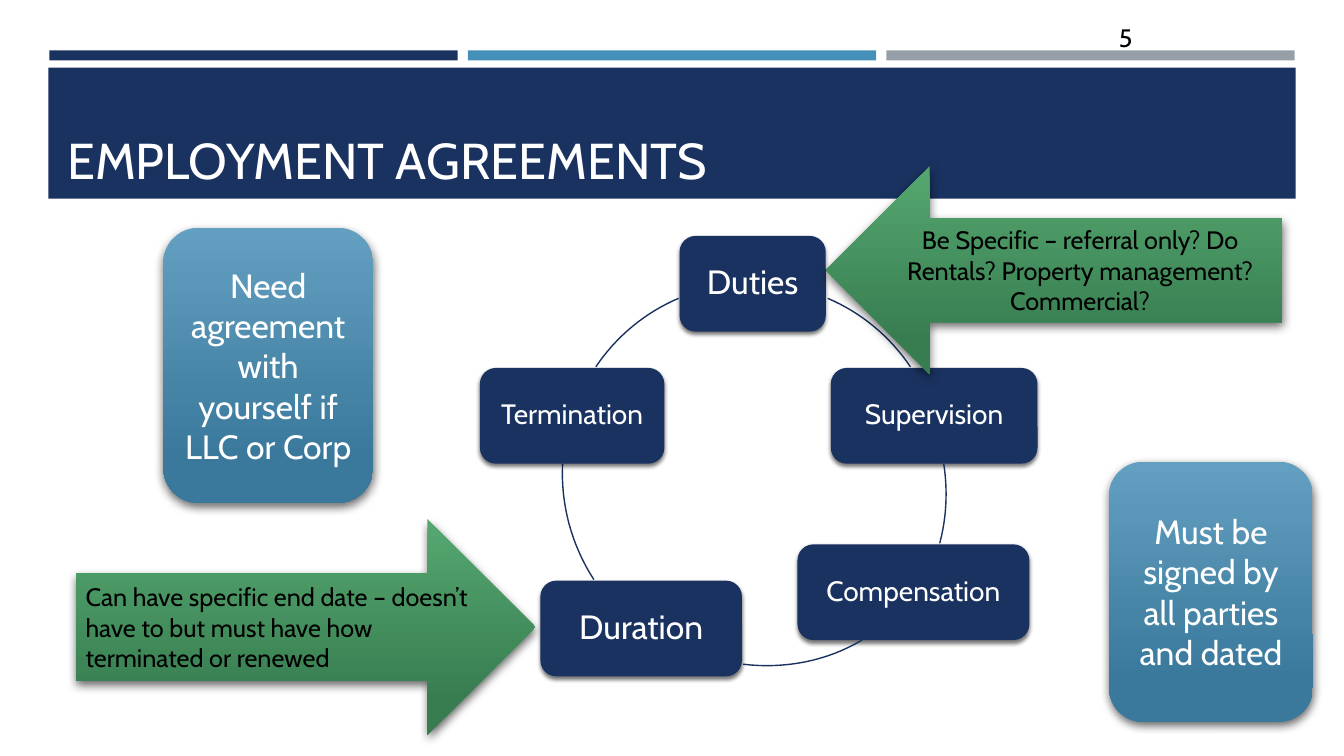
from dataclasses import dataclass

from lxml.etree import SubElement
from pptx import Presentation
from pptx.dml.color import RGBColor
from pptx.enum.shapes import MSO_SHAPE as Shape
from pptx.enum.text import MSO_ANCHOR as Anchor, PP_ALIGN as Align
from pptx.oxml.ns import qn
from pptx.util import Inches, Pt

NAVY, BLUE, GRAY, WHITE, BLACK = "1A3260", "4590B8", "969FA7", "FFFFFF", "000000"
GREEN_FADE = ("55A770", "377D50")
BLUE_FADE = ("639FC1", "3A799B")
FONT = "Cabin"
NODE_HEIGHT = 0.95
CURVE_STEPS = 16


@dataclass
class Shadow:
    alpha: int
    blur: float
    distance: float
    angle: int


@dataclass
class Node:
    text: str
    left: float
    top: float
    width: float
    size: int


@dataclass
class Callout:
    text: str
    kind: Shape
    box: tuple[float, float, float, float]
    fade: tuple[str, str]
    color: str
    size: int
    align: Align = Align.CENTER


NODE_SHADOW = Shadow(55, 3, 2, 90)
CALLOUT_SHADOW = Shadow(60, 7, 3, 84)

BARS = [(0.49, NAVY), (4.64, BLUE), (8.79, GRAY)]

NODES = [
    Node("Duties", 6.74, 2.34, 1.45, 24),
    Node("Supervision", 8.24, 3.65, 2.05, 20),
    Node("Compensation", 7.91, 5.4, 2.3, 20),
    Node("Duration", 5.36, 5.76, 2, 24),
    Node("Termination", 4.76, 3.65, 1.83, 20),
]

# Bezier control points of the arcs that join the nodes
ARCS = [
    ((8.21, 2.96), (8.54, 3.1), (8.83, 3.34), (9.03, 3.64)),
    ((9.36, 4.6), (9.4, 4.86), (9.39, 5.13), (9.32, 5.39)),
    ((8.55, 6.35), (8.2, 6.56), (7.78, 6.64), (7.37, 6.59)),
    ((5.89, 5.75), (5.67, 5.41), (5.56, 5.01), (5.58, 4.6)),
    ((5.91, 3.64), (6.11, 3.34), (6.4, 3.1), (6.73, 2.96)),
]

CALLOUTS = [
    Callout("Be Specific – referral only? Do Rentals? Property management? Commercial?",
            Shape.LEFT_ARROW, (8.19, 1.65, 4.53, 2.06), GREEN_FADE, BLACK, 18),
    Callout("Can have specific end date – doesn’t have to but must have how "
            "terminated or renewed",
            Shape.RIGHT_ARROW, (0.75, 5.15, 4.56, 2.14), GREEN_FADE, BLACK, 18, Align.LEFT),
    Callout("Need agreement with yourself if LLC or Corp",
            Shape.ROUNDED_RECTANGLE, (1.62, 2.26, 2.08, 2.73), BLUE_FADE, WHITE, 24),
    Callout("Must be signed by all parties and dated",
            Shape.ROUNDED_RECTANGLE, (11, 4.58, 2.02, 2.58), BLUE_FADE, WHITE, 24),
]


def rgb(color: str) -> RGBColor:
    return RGBColor.from_string(color)


def write(sp, text: str, *, size: int, color: str, align=Align.LEFT,
          anchor=Anchor.MIDDLE, spacing: float = 1.0, wrap: bool = True) -> None:
    tf = sp.text_frame
    tf.word_wrap = wrap
    tf.vertical_anchor = anchor
    p = tf.paragraphs[0]
    p.alignment = align
    p.line_spacing = spacing
    r = p.add_run()
    r.text = text
    r.font.name = FONT
    r.font.size = Pt(size)
    r.font.color.rgb = rgb(color)


def add_shadow(sp, shadow: Shadow) -> None:
    effects = sp._element.spPr.find(qn("a:effectLst"))
    outer = SubElement(effects, qn("a:outerShdw"), blurRad=str(Pt(shadow.blur)),
                       dist=str(Pt(shadow.distance)), dir=str(shadow.angle * 60000),
                       algn="ctr", rotWithShape="0")
    tone = SubElement(outer, qn("a:srgbClr"), val=BLACK)
    SubElement(tone, qn("a:alpha"), val=str(shadow.alpha * 1000))


def add_block(s, kind: Shape, box: tuple, *, fill: str = "", fade: tuple = (),
              shadow: Shadow | None = None):
    sp = s.shapes.add_shape(kind, *map(Inches, box))
    sp.line.fill.background()
    sp.shadow.inherit = False
    if fade:
        sp.fill.gradient()
        sp.fill.gradient_angle = 270
        for stop, color, position in zip(sp.fill.gradient_stops, fade, (0, 0.84)):
            stop.color.rgb = rgb(color)
            stop.position = position
    else:
        sp.fill.solid()
        sp.fill.fore_color.rgb = rgb(fill)
    if shadow:
        add_shadow(sp, shadow)
    return sp


def add_arc(s, controls: tuple) -> None:
    points = []
    for step in range(CURVE_STEPS + 1):
        t = step / CURVE_STEPS
        weights = ((1 - t) ** 3, 3 * t * (1 - t) ** 2, 3 * t ** 2 * (1 - t), t ** 3)
        points.append(tuple(Inches(sum(w * c for w, c in zip(weights, axis)))
                            for axis in zip(*controls)))
    builder = s.shapes.build_freeform(*points[0])
    builder.add_line_segments(points[1:], close=False)
    sp = builder.convert_to_shape()
    sp.fill.background()
    sp.line.color.rgb = rgb(NAVY)
    sp.line.width = Pt(1)
    sp.shadow.inherit = False


def main() -> None:
    prs = Presentation()
    prs.slide_width, prs.slide_height = Inches(13.33), Inches(7.5)
    s = prs.slides.add_slide(prs.slide_layouts[6])

    # Header bars and title band
    for left, color in BARS:
        add_block(s, Shape.RECTANGLE, (left, 0.5, 4.05, 0.1), fill=color)
    add_block(s, Shape.RECTANGLE, (0.48, 0.67, 12.37, 1.3), fill=NAVY)
    title = s.shapes.add_textbox(*map(Inches, (0.57, 0.85, 9, 1.08)))
    write(title, "EMPLOYMENT AGREEMENTS", size=36, color=WHITE, anchor=Anchor.BOTTOM)

    # Cycle of agreement topics
    for node, arc in zip(NODES, ARCS):
        sp = add_block(s, Shape.ROUNDED_RECTANGLE,
                       (node.left, node.top, node.width, NODE_HEIGHT),
                       fill=NAVY, shadow=NODE_SHADOW)
        write(sp, node.text, size=node.size, color=WHITE, align=Align.CENTER, spacing=0.9)
        add_arc(s, arc)

    # Slide number
    number = s.shapes.add_textbox(*map(Inches, (11, 0.17, 0.33, 0.4)))
    write(number, "5", size=18, color=BLACK, anchor=Anchor.TOP, wrap=False)

    # Arrows and side notes
    for note in CALLOUTS:
        sp = add_block(s, note.kind, note.box, fade=note.fade, shadow=CALLOUT_SHADOW)
        write(sp, note.text, size=note.size, color=note.color, align=note.align)

    prs.save("out.pptx")


if __name__ == "__main__":
    main()
